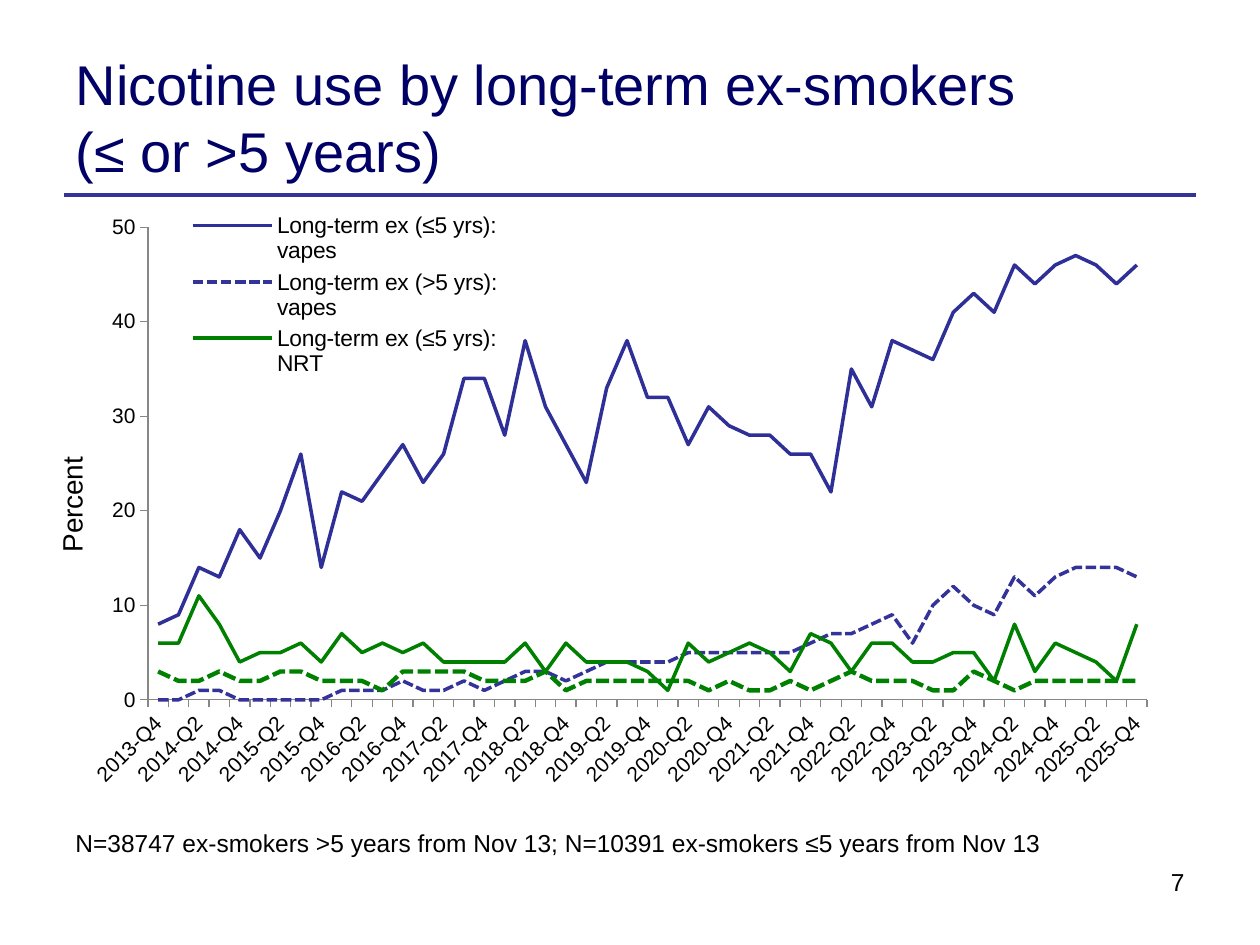
from lxml.etree import SubElement
from pptx import Presentation
from pptx.chart.data import CategoryChartData
from pptx.dml.color import RGBColor
from pptx.enum.chart import XL_CHART_TYPE as ChartType, XL_LEGEND_POSITION as LegendPosition
from pptx.enum.chart import XL_MARKER_STYLE as MarkerStyle, XL_TICK_MARK as TickMark
from pptx.enum.dml import MSO_LINE as Dash
from pptx.enum.shapes import MSO_CONNECTOR as Connector
from pptx.enum.text import MSO_ANCHOR as Anchor, PP_ALIGN as Align
from pptx.oxml import parse_xml
from pptx.oxml.ns import nsdecls, qn
from pptx.util import Pt

FONT = "Arial"
NAVY = RGBColor(0x00, 0x00, 0x66)
RULE_BLUE = RGBColor(0x33, 0x33, 0x99)
VAPE_BLUE = RGBColor(0x2F, 0x2F, 0x98)
GREEN = RGBColor(0x00, 0x80, 0x00)
GRAY = RGBColor(0x87, 0x87, 0x87)
BLACK = RGBColor(0x00, 0x00, 0x00)

QUARTERS = [f"{year}-Q{quarter}" for year in range(2013, 2026)
            for quarter in range(1, 5)][3:]

SERIES = [
    ("Long-term ex (≤5 yrs): vapes", VAPE_BLUE, 2, None,
     [8, 9, 14, 13, 18, 15, 20, 26, 14, 22, 21, 24, 27, 23, 26, 34, 34,
      28, 38, 31, 27, 23, 33, 38, 32, 32, 27, 31, 29, 28, 28, 26, 26, 22,
      35, 31, 38, 37, 36, 41, 43, 41, 46, 44, 46, 47, 46, 44, 46]),
    ("Long-term ex (>5 yrs): vapes", RULE_BLUE, 2, Dash.SQUARE_DOT,
     [0, 0, 1, 1, 0, 0, 0, 0, 0, 1, 1, 1, 2, 1, 1, 2, 1,
      2, 3, 3, 2, 3, 4, 4, 4, 4, 5, 5, 5, 5, 5, 5, 6, 7,
      7, 8, 9, 6, 10, 12, 10, 9, 13, 11, 13, 14, 14, 14, 13]),
    ("Long-term ex (≤5 yrs): NRT", GREEN, 2, None,
     [6, 6, 11, 8, 4, 5, 5, 6, 4, 7, 5, 6, 5, 6, 4, 4, 4,
      4, 6, 3, 6, 4, 4, 4, 3, 1, 6, 4, 5, 6, 5, 3, 7, 6,
      3, 6, 6, 4, 4, 5, 5, 2, 8, 3, 6, 5, 4, 2, 8]),
    ("Long-term ex (>5 yrs): NRT", GREEN, 2.5, Dash.SQUARE_DOT,
     [3, 2, 2, 3, 2, 2, 3, 3, 2, 2, 2, 1, 3, 3, 3, 3, 2,
      2, 2, 3, 1, 2, 2, 2, 2, 2, 2, 1, 2, 1, 1, 2, 1, 2,
      3, 2, 2, 2, 1, 1, 3, 2, 1, 2, 2, 2, 2, 2, 2]),
]


def format_font(font, size, color=BLACK):
    """Apply the deck typeface with a size and a colour."""
    font.name, font.size, font.bold = FONT, Pt(size), False
    font.color.rgb = color


def set_layout(element, inner=False, **fractions):
    """Give a chart part a manual layout in fractions of the chart."""
    for old_layout in element.findall(qn("c:layout")):
        element.remove(old_layout)
    layout = parse_xml(f"<c:layout {nsdecls('c')}><c:manualLayout/></c:layout>")
    manual = layout[0]
    if inner:
        SubElement(manual, qn("c:layoutTarget")).set("val", "inner")
    for side in "xy":
        SubElement(manual, qn(f"c:{side}Mode")).set("val", "edge")
    for name, value in fractions.items():
        SubElement(manual, qn(f"c:{name}")).set("val", str(value))
    overlay = element.find(qn("c:overlay"))
    if overlay is None:
        element.insert(0, layout)
    else:
        overlay.addprevious(layout)
    return layout


def add_title(slide, text, left, top, width, height):
    """Place and format the title placeholder."""
    title = slide.shapes.title
    title.left, title.top, title.width, title.height = map(Pt, (left, top, width, height))
    frame = title.text_frame
    frame.text = text
    frame.word_wrap = True
    frame.vertical_anchor = Anchor.MIDDLE
    paragraph = frame.paragraphs[0]
    paragraph.alignment = Align.LEFT
    format_font(paragraph.runs[0].font, 32, NAVY)


def add_rule(slide, left, top, width):
    """Draw the horizontal rule below the title."""
    rule = slide.shapes.add_connector(
        Connector.STRAIGHT, Pt(left), Pt(top), Pt(left + width), Pt(top))
    rule.line.color.rgb = RULE_BLUE
    rule.line.width = Pt(2.25)
    SubElement(rule._element.spPr, qn("a:effectLst"))


def add_label(slide, text, left, top, width, height, alignment=Align.LEFT):
    """Add a wrapped line of small text."""
    box = slide.shapes.add_textbox(Pt(left), Pt(top), Pt(width), Pt(height))
    frame = box.text_frame
    frame.text = text
    frame.word_wrap = True
    paragraph = frame.paragraphs[0]
    paragraph.alignment = alignment
    format_font(paragraph.runs[0].font, 14)


def format_axes(chart):
    """Style the quarter axis and the percent axis."""
    for axis in (chart.category_axis, chart.value_axis):
        axis.has_major_gridlines = False
        axis.major_tick_mark = TickMark.OUTSIDE
        axis.minor_tick_mark = TickMark.NONE
        axis.format.line.color.rgb = GRAY
        format_font(axis.tick_labels.font, 12)

    quarters = chart.category_axis._element
    quarters.find(qn("c:txPr")).find(qn("a:bodyPr")).set("rot", "-2700000")
    skip = parse_xml(f'<c:tickLblSkip {nsdecls("c")} val="2"/>')
    quarters.find(qn("c:noMultiLvlLbl")).addprevious(skip)

    percent = chart.value_axis
    percent.minimum_scale, percent.maximum_scale, percent.major_unit = 0, 50, 10
    frame = percent.axis_title.text_frame
    frame.text = "Percent"
    format_font(frame.paragraphs[0].runs[0].font, 16)
    frame._txBody.find(qn("a:bodyPr")).set("rot", "-5400000")
    set_layout(percent.axis_title._element, x=0.01, y=0.41)


def format_legend(chart):
    """Place the legend over the plot and list the first three series."""
    chart.has_legend = True
    legend = chart.legend
    legend.position = LegendPosition.RIGHT
    legend.include_in_layout = False
    format_font(legend.font, 13)
    layout = set_layout(legend._element, x=0.12, y=0.02, w=0.29, h=0.28)
    layout.addprevious(parse_xml(
        f'<c:legendEntry {nsdecls("c")}><c:idx val="3"/>'
        '<c:delete val="1"/></c:legendEntry>'))


def add_nicotine_chart(slide, left, top, width, height):
    """Add the line chart of nicotine use by quarter."""
    data = CategoryChartData()
    data.categories = QUARTERS
    for name, _, _, _, values in SERIES:
        data.add_series(name, values)
    chart = slide.shapes.add_chart(
        ChartType.LINE, Pt(left), Pt(top), Pt(width), Pt(height), data).chart
    chart.has_title = False
    format_font(chart.font, 18)
    for series, (_, color, weight, dash, _) in zip(chart.plots[0].series, SERIES):
        series.smooth = False
        series.marker.style = MarkerStyle.NONE
        line = series.format.line
        line.color.rgb = color
        line.width = Pt(weight)
        if dash:
            line.dash_style = dash
    chart.plots[0].vary_by_categories = False
    format_axes(chart)
    format_legend(chart)
    plot_area = chart._chartSpace.chart.plotArea
    set_layout(plot_area, inner=True, x=0.095, y=0.051, w=0.862, h=0.755)


def main():
    """Build and save the slide."""
    presentation = Presentation()
    presentation.slide_width, presentation.slide_height = Pt(720), Pt(540)
    slide = presentation.slides.add_slide(presentation.slide_layouts[5])
    add_rule(slide, 36.7, 111.6, 646.6)
    add_nicotine_chart(slide, 21.6, 111.6, 662.4, 357.8)
    add_title(slide, "Nicotine use by long-term ex-smokers (≤ or >5 years)",
              36, 21.6, 568, 90)
    add_label(slide, "7", 484.6, 491.8, 199.4, 37.4, Align.RIGHT)
    add_label(slide, "N=38747 ex-smokers >5 years from Nov 13; "
              "N=10391 ex-smokers ≤5 years from Nov 13", 36, 469.4, 648, 24.5)
    presentation.save("out.pptx")


if __name__ == "__main__":
    main()
